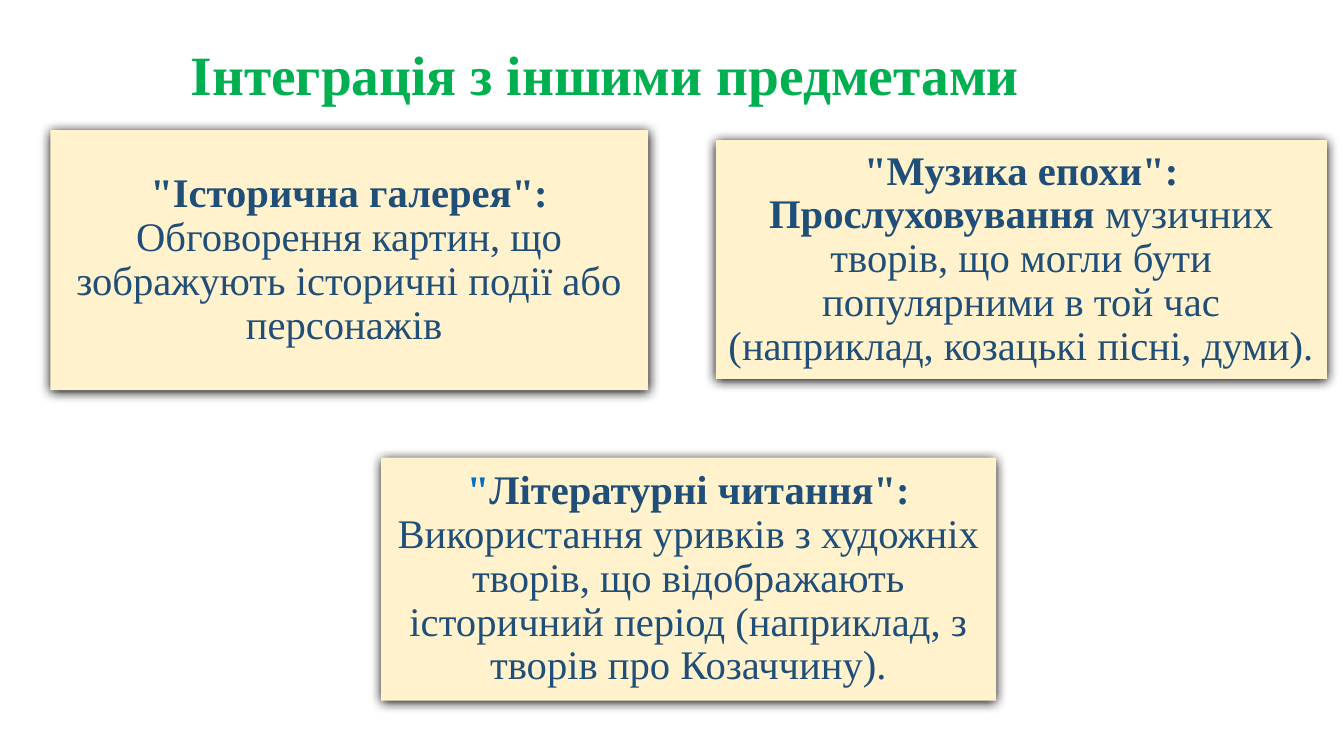
from lxml.etree import SubElement
from pptx import Presentation
from pptx.dml.color import RGBColor
from pptx.enum.shapes import MSO_SHAPE
from pptx.enum.text import MSO_ANCHOR, MSO_AUTO_SIZE, PP_ALIGN
from pptx.oxml.ns import qn
from pptx.util import Inches, Pt

FONT = "Times New Roman"
GREEN, CREAM, NAVY, BLUE = "00B050", "FFF2CC", "1F4E79", "0070C0"
TITLE = "Інтеграція з іншими предметами"
CARDS = [
    ((0.5, 1.29, 5.93, 2.58), [
        ('"Історична галерея":', True, NAVY),
        (" Обговорення картин, що зображують історичні події або персонажів ", False, NAVY),
    ]),
    ((7.1, 1.39, 6.06, 2.37), [
        ('"Музика епохи": Прослуховування', True, NAVY),
        (" музичних творів, що могли бути популярними в той час "
         "(наприклад, козацькі пісні, думи).", False, NAVY),
    ]),
    ((3.78, 4.54, 6.1, 2.41), [
        ('"', True, BLUE),
        ('Літературні читання":', True, NAVY),
        (" Використання уривків з художніх творів, що відображають історичний "
         "період (наприклад, з творів про Козаччину).", False, NAVY),
    ]),
]


def color(value):
    return RGBColor.from_string(value)


def add_shadow(shape):
    shape.shadow.inherit = False
    effects = shape._element.spPr.find(qn("a:effectLst"))
    shadow = SubElement(effects, qn("a:outerShdw"), blurRad=str(Pt(8.5)),
                        dist=str(Pt(1)), dir="5400000", algn="ctr", rotWithShape="0")
    SubElement(shadow, qn("a:srgbClr"), val="000000")


def add_title(page):
    title = page.shapes.title
    title.left, title.top, title.width, title.height = map(Inches, (1.79, 0.4, 10.63, 1.11))
    frame = title.text_frame
    frame.text = TITLE
    frame.auto_size = MSO_AUTO_SIZE.NONE
    frame.vertical_anchor = MSO_ANCHOR.TOP
    frame.margin_top = 0
    para = frame.paragraphs[0]
    para.alignment = PP_ALIGN.LEFT
    para.line_spacing = 1.0
    para.font.name = FONT
    para.font.size = Pt(39.6)
    para.font.bold = True
    para.font.color.rgb = color(GREEN)


def add_card(page, place, spans):
    box = page.shapes.add_shape(MSO_SHAPE.RECTANGLE, *map(Inches, place))
    box.fill.solid()
    box.fill.fore_color.rgb = color(CREAM)
    box.line.fill.background()
    add_shadow(box)
    frame = box.text_frame
    frame.word_wrap = True
    frame.vertical_anchor = MSO_ANCHOR.MIDDLE
    frame.margin_left = frame.margin_right = Inches(0.12)
    frame.margin_top = frame.margin_bottom = Inches(0.12)
    para = frame.paragraphs[0]
    para.alignment = PP_ALIGN.CENTER
    para.line_spacing = 0.9
    para.font.name = FONT
    para.font.size = Pt(29)
    for text, bold, ink in spans:
        span = para.add_run()
        span.text = text
        span.font.bold = bold
        span.font.color.rgb = color(ink)


def main():
    deck = Presentation()
    deck.slide_width, deck.slide_height = Inches(13.33), Inches(7.5)
    page = deck.slides.add_slide(deck.slide_layouts[5])
    add_title(page)
    for place, spans in CARDS:
        add_card(page, place, spans)
    deck.save("out.pptx")


if __name__ == "__main__":
    main()
